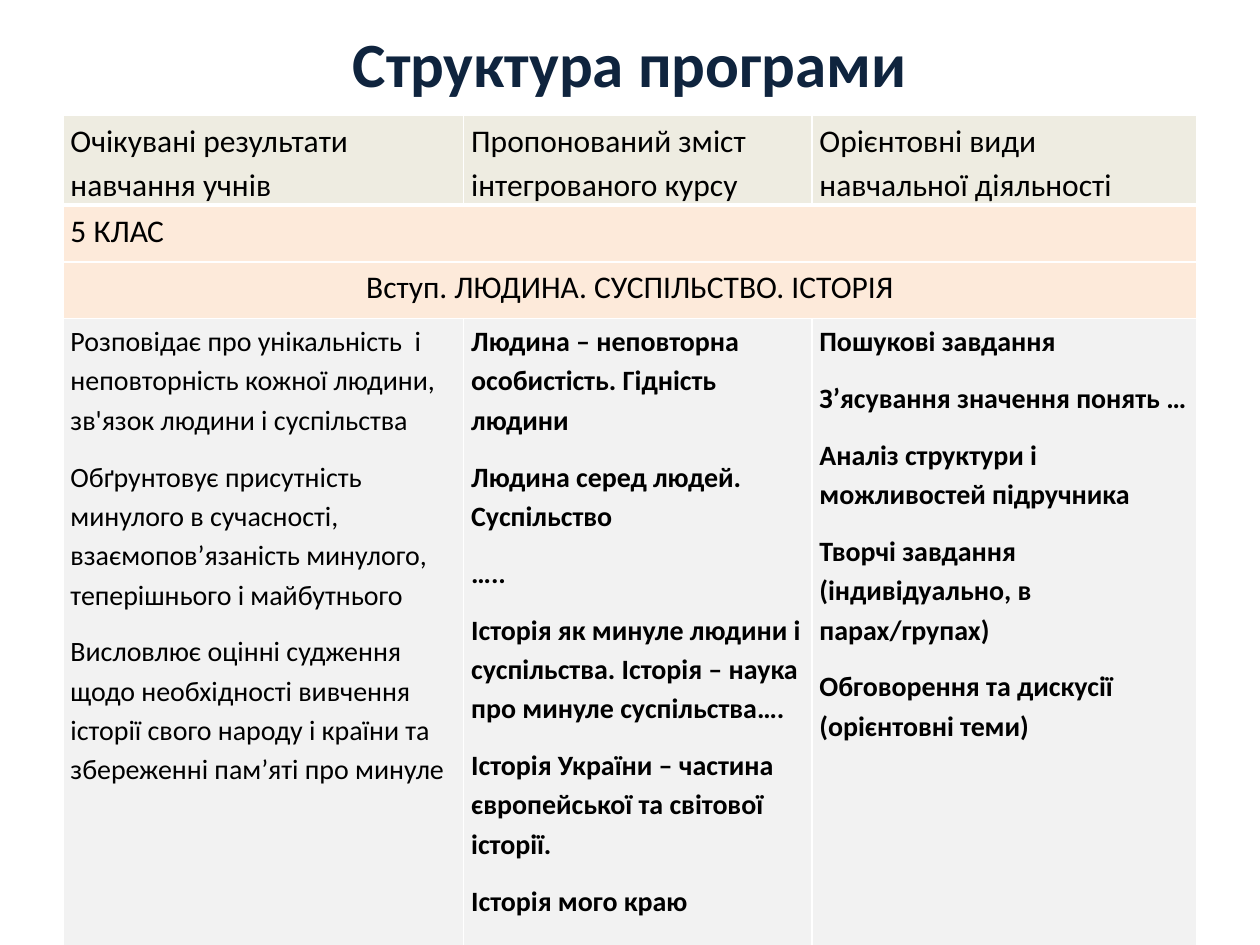
from lxml.etree import SubElement
from pptx import Presentation
from pptx.dml.color import RGBColor
from pptx.enum.text import MSO_ANCHOR, PP_ALIGN
from pptx.oxml.ns import qn
from pptx.util import Pt

SAND, PEACH, GREY = "EEECE1", "FDEADA", "F2F2F2"
WHITE, BLACK, NAVY = "FFFFFF", "000000", "0F243E"

HEADINGS = [
    "Очікувані результати навчання учнів",
    "Пропонований зміст інтегрованого курсу",
    "Орієнтовні види навчальної діяльності",
]
RESULTS = [
    "Розповідає про унікальність  і неповторність кожної людини, зв'язок людини і суспільства",
    "Обґрунтовує присутність минулого в сучасності, взаємопов’язаність минулого, "
    "теперішнього і майбутнього",
    "Висловлює оцінні судження щодо необхідності вивчення історії свого народу і країни "
    "та збереженні пам’яті про минуле",
]
CONTENT = [
    "Людина – неповторна особистість. Гідність людини",
    "Людина серед людей. Суспільство",
    "…..",
    "Історія як минуле людини і суспільства. Історія – наука про минуле суспільства….",
    "Історія України – частина європейської та світової історії.",
    "Історія мого краю",
]
ACTIVITIES = [
    "Пошукові завдання",
    "З’ясування значення понять …",
    "Аналіз структури і можливостей підручника",
    "Творчі завдання (індивідуально, в парах/групах)",
    "Обговорення та дискусії (орієнтовні теми)",
]


def color(value):
    return RGBColor.from_string(value)


def apply(target, values):
    for name, value in values.items():
        setattr(target, name, value)


class ProgramPage:
    font = "Calibri"
    cell_format = {"margin_left": Pt(4.3), "margin_right": Pt(4.3),
                   "margin_top": Pt(0.7), "margin_bottom": 0,
                   "vertical_anchor": MSO_ANCHOR.TOP}
    para_format = {"line_spacing": 1.15, "space_after": Pt(10)}

    def __init__(self, deck):
        self.page = deck.slides.add_slide(deck.slide_layouts[5])

    def add_text(self, para, text, size, bold=False, ink=BLACK, align=PP_ALIGN.LEFT):
        para.alignment = align
        span = para.add_run()
        span.text = text
        apply(span.font, {"name": self.font, "size": Pt(size), "bold": bold})
        span.font.color.rgb = color(ink)

    def title(self, text, left, top, width, height):
        box = self.page.shapes.title
        apply(box, {"left": Pt(left), "top": Pt(top),
                    "width": Pt(width), "height": Pt(height)})
        box.text_frame.vertical_anchor = MSO_ANCHOR.MIDDLE
        self.add_text(box.text_frame.paragraphs[0], text, 36, True, NAVY, PP_ALIGN.CENTER)

    def table(self, left, top, widths, heights):
        table = self.page.shapes.add_table(
            len(heights), len(widths), Pt(left), Pt(top),
            Pt(sum(widths)), Pt(sum(heights))).table
        apply(table, {"first_row": False, "horz_banding": False})
        for column, width in zip(table.columns, widths):
            column.width = Pt(width)
        for row, height in zip(table.rows, heights):
            row.height = Pt(height)
        return table

    def borders(self, cell, bottom):
        properties = cell._tc.get_or_add_tcPr()
        for side, width in (("L", 1), ("R", 1), ("T", 1), ("B", bottom)):
            line = SubElement(properties, qn("a:ln" + side), w=str(Pt(width)))
            SubElement(SubElement(line, qn("a:solidFill")), qn("a:srgbClr"), val=WHITE)

    def cell(self, cell, texts, fill, size=18, bottom=1, **style):
        apply(cell, self.cell_format)
        self.borders(cell, bottom)
        cell.fill.solid()
        cell.fill.fore_color.rgb = color(fill)
        frame = cell.text_frame
        for index, text in enumerate(texts):
            para = frame.add_paragraph() if index else frame.paragraphs[0]
            apply(para, self.para_format)
            self.add_text(para, text, size, **style)

    def band(self, table, row, text, align):
        table.cell(row, 0).merge(table.cell(row, len(table.columns) - 1))
        self.cell(table.cell(row, 0), [text], PEACH, align=align)


def main():
    deck = Presentation()
    apply(deck, {"slide_width": Pt(720), "slide_height": Pt(540)})
    page = ProgramPage(deck)
    page.title("Структура програми", 36, 0, 648, 71)

    # Program table: headings, two full-width bands, lists
    table = page.table(36, 66, [229, 199, 220], [50.4, 32.4, 32.4, 360])
    for column, heading in enumerate(HEADINGS):
        page.cell(table.cell(0, column), [heading], SAND, bottom=3)
    page.band(table, 1, "5 КЛАС", PP_ALIGN.LEFT)
    page.band(table, 2, "Вступ. ЛЮДИНА. СУСПІЛЬСТВО. ІСТОРІЯ", PP_ALIGN.CENTER)
    for column, texts in enumerate([RESULTS, CONTENT, ACTIVITIES]):
        page.cell(table.cell(3, column), texts, GREY, size=16, bold=column > 0)

    deck.save("out.pptx")


if __name__ == "__main__":
    main()
